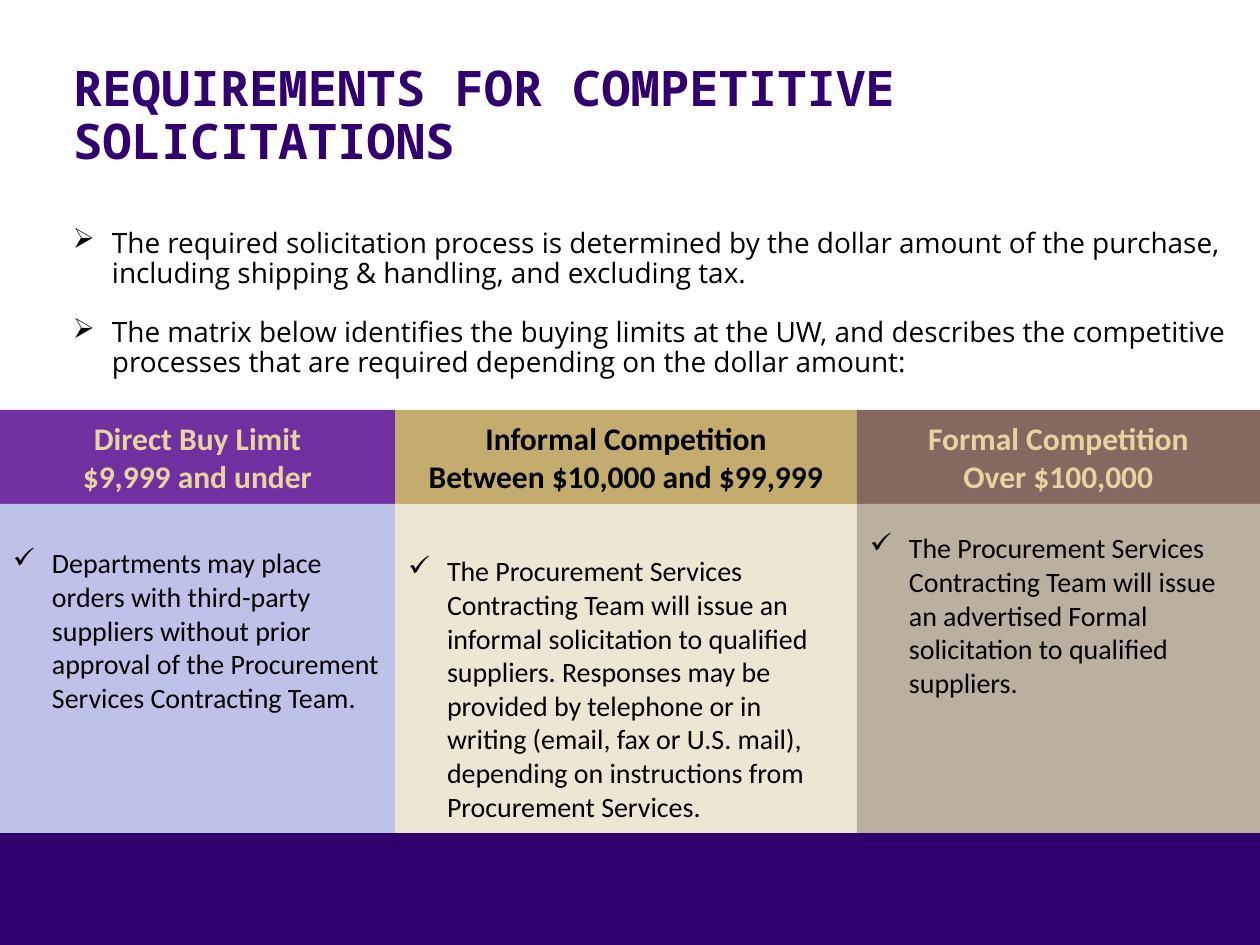
from pptx import Presentation
from pptx.dml.color import RGBColor
from pptx.enum.shapes import MSO_SHAPE as Shape
from pptx.enum.text import MSO_ANCHOR as Anchor, MSO_AUTO_SIZE as AutoSize, PP_ALIGN as Align
from pptx.oxml.ns import qn
from pptx.util import Emu, Pt
from lxml.etree import SubElement

PURPLE, GOLD, BLACK = "32006E", "E8D3A2", "000000"
WIDTH, HEIGHT = 1260, 945


def px(length):
    """Turn whole pixels into EMU."""
    return Emu(round(length * 914400 / 126))


def color(value):
    """Turn a hex string into a colour."""
    return RGBColor.from_string(value)


def write(frame, *lines, font="Calibri", size=16, fill=BLACK, bold=False,
          align=Align.LEFT, anchor=Anchor.TOP, bullet=None, spacing=1.0,
          insets=(13, 6, 13, 6)):
    """Fill a text frame with one formatted paragraph per line."""
    frame.word_wrap = True
    frame.auto_size = AutoSize.NONE
    frame.vertical_anchor = anchor
    frame.margin_left, frame.margin_top, frame.margin_right, frame.margin_bottom = map(px, insets)
    for index, line in enumerate(lines):
        paragraph = frame.add_paragraph() if index else frame.paragraphs[0]
        paragraph.alignment = align
        paragraph.line_spacing = spacing
        if bullet:
            properties = paragraph._p.get_or_add_pPr()
            properties.set("marL", str(px(39)))
            properties.set("indent", str(-px(39)))
            SubElement(properties, qn("a:buChar")).set("char", bullet)
        run = paragraph.add_run()
        run.text = line
        run.font.name = font
        run.font.size = Pt(size)
        run.font.bold = bold
        run.font.color.rgb = color(fill)


class SlideBuilder:
    """Hold the style and the current slide."""

    title_font = "Noto Sans Mono"
    text_font = "Open Sans"

    def __init__(self, presentation):
        """Add a title-only slide."""
        self.slide = presentation.slides.add_slide(presentation.slide_layouts[5])

    def title(self, text, left, top, width, height):
        """Place and format the title."""
        shape = self.slide.shapes.title
        shape.left, shape.top, shape.width, shape.height = map(px, (left, top, width, height))
        write(shape.text_frame, text, font=self.title_font, size=28, fill=PURPLE,
              bold=True, anchor=Anchor.BOTTOM, spacing=0.9)

    def point(self, text, left, top, width, height):
        """Add an introductory bullet point."""
        shape = self.slide.shapes.add_textbox(*map(px, (left, top, width, height)))
        write(shape.text_frame, text, font=self.text_font, bullet="➢", spacing=0.9)

    def panel(self, fill, left, top, width, height):
        """Add a plain filled rectangle."""
        shape = self.slide.shapes.add_shape(Shape.RECTANGLE, *map(px, (left, top, width, height)))
        shape.shadow.inherit = False
        shape.fill.solid()
        shape.fill.fore_color.rgb = color(fill)
        shape.line.fill.background()
        return shape

    def column(self, left, width, heading, heading_fill, heading_color, text, fill, text_top):
        """Add a heading panel with its description below."""
        header = self.panel(heading_fill, left, 410, width, 94)
        write(header.text_frame, *heading, size=18, fill=heading_color, bold=True,
              align=Align.CENTER, anchor=Anchor.MIDDLE)
        body = self.panel(fill, left, 504, width, 329)
        write(body.text_frame, text, bullet="✓", insets=(13, text_top, 13, 0))


def main():
    """Build and save the slide."""
    presentation = Presentation()
    presentation.slide_width, presentation.slide_height = px(WIDTH), px(HEIGHT)
    builder = SlideBuilder(presentation)
    builder.panel(PURPLE, 0, 832, WIDTH, 113)
    builder.title("REQUIREMENTS FOR COMPETITIVE SOLICITATIONS", 60, 39, 1120, 137)
    builder.point("The required solicitation process is determined by the dollar amount of the "
                  "purchase, including shipping & handling, and excluding tax.", 60, 223, 1200, 81)
    builder.point("The matrix below identifies the buying limits at the UW, and describes the "
                  "competitive processes that are required depending on the dollar amount:",
                  60, 312, 1221, 81)
    columns = [
        (395, ("Direct Buy Limit", "$9,999 and under"), "7030A0", GOLD,
         "Departments may place orders with third-party suppliers without prior approval of "
         "the Procurement Services Contracting Team.", "BDC2E9", 42),
        (462, ("Informal Competition", "Between $10,000 and $99,999"), "C4AB6E", BLACK,
         "The Procurement Services Contracting Team will issue an informal solicitation to "
         "qualified suppliers. Responses may be provided by telephone or in writing (email, "
         "fax or U.S. mail), depending on instructions from Procurement Services.", "EDE6D3", 50),
        (403, ("Formal Competition", "Over $100,000"), "856961", GOLD,
         "The Procurement Services Contracting Team will issue an advertised Formal "
         "solicitation to qualified suppliers.", "BBAF9F", 27),
    ]
    left = 0
    for width, *content in columns:
        builder.column(left, width, *content)
        left += width
    presentation.save("out.pptx")


if __name__ == "__main__":
    main()
